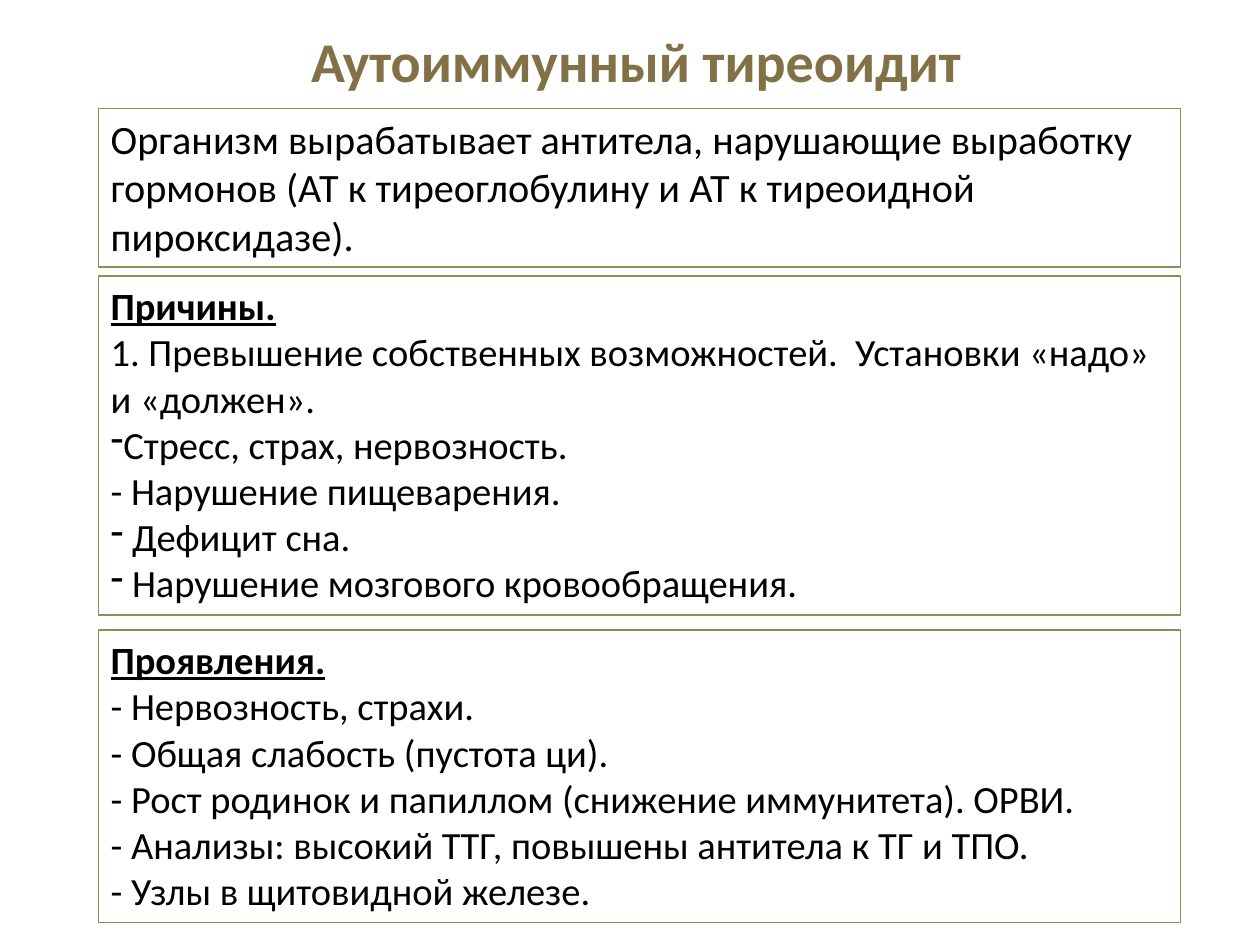
import pptx
import pptx.dml.color
import pptx.enum.text
import pptx.oxml.ns
import pptx.util
from lxml import etree

Inches = pptx.util.Inches
Pt = pptx.util.Pt


def color(value):
    return pptx.dml.color.RGBColor.from_string(value)


class Handout:
    font = "Calibri"
    ink = "000000"
    accent = "827146"
    border = "948A54"
    left, width = 0.78, 8.59

    def __init__(self, page):
        self.page = page

    def style(self, span, size, ink, bold=False, underline=False):
        span.font.name = self.font
        span.font.size = Pt(size)
        span.font.color.rgb = color(ink)
        span.font.bold = bold
        span.font.underline = underline

    def box(self, left, top, width, height, wrap=True):
        box = self.page.shapes.add_textbox(
            Inches(left), Inches(top), Inches(width), Inches(height))
        box.text_frame.word_wrap = wrap
        box.text_frame.auto_size = pptx.enum.text.MSO_AUTO_SIZE.SHAPE_TO_FIT_TEXT
        return box

    def title(self, text, left, top, width, height):
        frame = self.box(left, top, width, height, wrap=False).text_frame
        frame.text = text
        para = frame.paragraphs[0]
        para.alignment = pptx.enum.text.PP_ALIGN.CENTER
        self.style(para.runs[0], 32, self.accent, bold=True)

    def bullet(self, para):
        properties = para._p.get_or_add_pPr()
        mark = etree.SubElement(properties, pptx.oxml.ns.qn("a:buChar"))
        mark.set("char", "-")

    def panel(self, top, height, size, text, bullets=(), headed=True):
        box = self.box(self.left, top, self.width, height)
        box.line.color.rgb = color(self.border)
        box.line.width = Pt(0.75)
        frame = box.text_frame
        frame.text = text
        for item in bullets:
            para = frame.add_paragraph()
            para.text = item
            self.bullet(para)
        for para in frame.paragraphs:
            for span in para.runs:
                self.style(span, size, self.ink)
        if headed:
            heading = frame.paragraphs[0].runs[0]
            self.style(heading, size, self.ink, bold=True, underline=True)


def main():
    deck = pptx.Presentation()
    deck.slide_width = Inches(10)
    deck.slide_height = Inches(7.5)
    handout = Handout(deck.slides.add_slide(deck.slide_layouts[6]))

    handout.title("Аутоиммунный тиреоидит", 2.34, 0.16, 5.42, 0.64)
    handout.panel(
        0.86, 1.26, 23,
        "Организм вырабатывает антитела, нарушающие выработку гормонов "
        "(АТ к тиреоглобулину и АТ к тиреоидной пироксидазе).",
        headed=False)
    handout.panel(
        2.19, 2.69, 22,
        "Причины.\v1. Превышение собственных возможностей.  "
        "Установки «надо» и «должен».",
        bullets=[
            "Стресс, страх, нервозность.\v- Нарушение пищеварения.",
            " Дефицит сна.",
            " Нарушение мозгового кровообращения.",
        ])
    handout.panel(
        5, 2.32, 22,
        "\v".join([
            "Проявления.",
            "- Нервозность, страхи.",
            "- Общая слабость (пустота ци).",
            "- Рост родинок и папиллом (снижение иммунитета). ОРВИ.",
            "- Анализы: высокий ТТГ, повышены антитела к ТГ и ТПО.",
            "- Узлы в щитовидной железе.",
        ]))
    deck.save("out.pptx")


if __name__ == "__main__":
    main()
